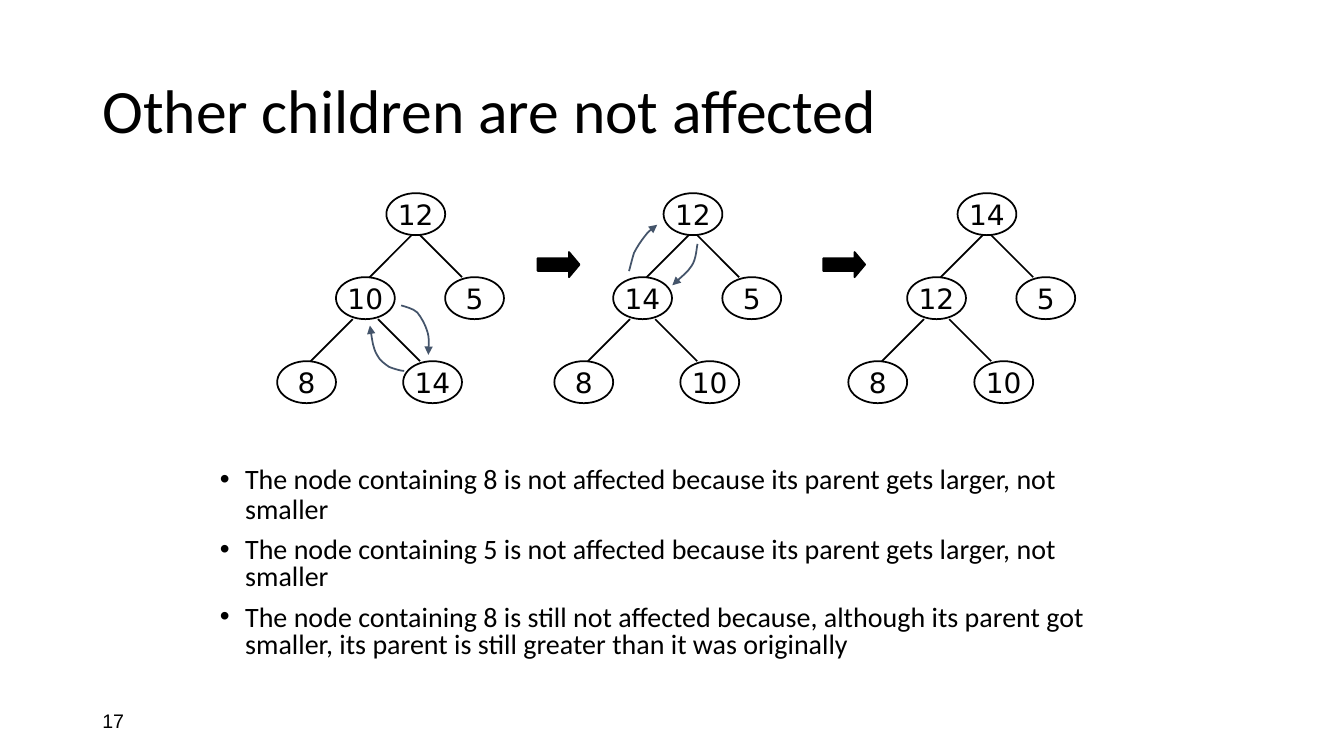
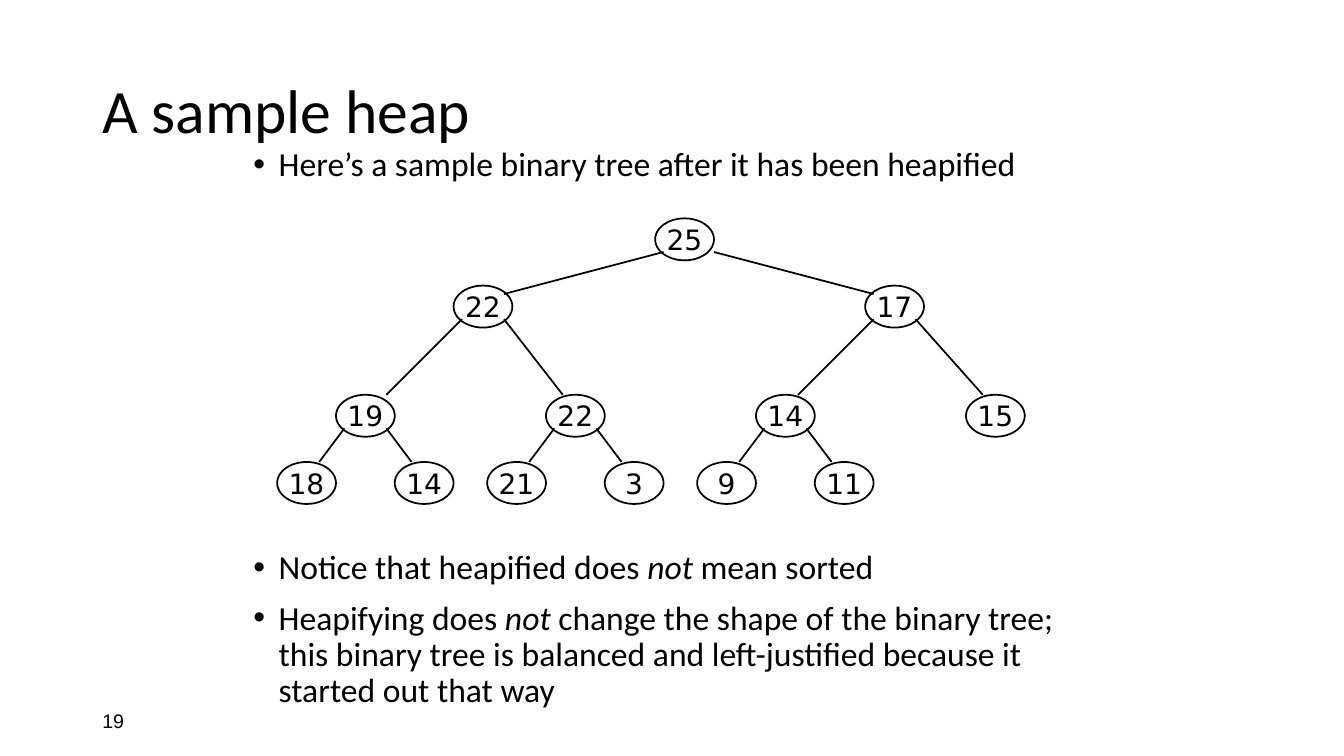
from lxml.etree import SubElement
from pptx import Presentation
from pptx.dml.color import RGBColor
from pptx.enum.shapes import MSO_CONNECTOR, MSO_SHAPE
from pptx.enum.text import MSO_ANCHOR, PP_ALIGN
from pptx.oxml.ns import qn
from pptx.util import Inches, Pt

# The slide is a grid of 160 x 90 cells, each 1/12 inch
CELL = Inches(1) // 12
COLS, ROWS = 160, 90
NODE_W, NODE_H = 7, 5
BLACK, SLATE = "000000", "44546A"
BODY_FONT, NODE_FONT, NUMBER_FONT = "Calibri", "DejaVu Sans", "Arial"
LINE_WIDTH = Pt(1.25)

# Three-level tree: node places, and edges as x1, y1, x2, y2, in cells
SMALL_NODES = [(46, 23), (40, 33), (53, 33), (33, 43), (48, 43)]
SMALL_EDGES = [(49, 28, 44, 33), (50, 28, 55, 33),
               (42, 38, 37, 43), (45, 38, 50, 43)]
SMALL_TREES = [(0, (12, 10, 5, 8, 14)), (33, (12, 14, 5, 8, 10)),
               (68, (14, 12, 5, 8, 10))]

# Swap arrows: Bezier points in hundredths of an inch
SWAPS = [
    [(401, 368), (398, 368), (391, 366), (386, 364), (382, 361), (377, 358),
     (374, 352), (370, 345), (368, 329), (367, 323)],
    [(398, 303), (401, 304), (410, 306), (414, 310), (418, 315), (422, 322),
     (424, 329), (426, 336), (425, 348), (425, 352)],
    [(624, 269), (625, 266), (627, 257), (629, 251), (632, 245), (636, 239),
     (640, 234), (643, 230), (649, 225), (652, 223)],
    [(692, 242), (691, 245), (691, 257), (686, 264), (682, 270), (671, 279),
     (667, 283)],
]

# Sample heap: top of each level with its (left, value) pairs
HEAP_LEVELS = [
    (26, [(78, 25)]),
    (34, [(54, 22), (103, 17)]),
    (47, [(40, 19), (65, 22), (90, 14), (115, 15)]),
    (55, [(33, 18), (47, 14), (58, 21), (72, 3), (83, 9), (97, 11)]),
]
HEAP_TOP_EDGES = [(79, 30, 60, 35), (85, 30, 104, 35), (55, 38, 46, 47),
                  (60, 38, 67, 47), (104, 38, 95, 47), (109, 38, 117, 47)]


def rgb(color):
    return RGBColor.from_string(color)


def cells(*values):
    return [round(v * CELL) for v in values]


def style(r, size, font, italic=None):
    r.font.size, r.font.name, r.font.italic = Pt(size), font, italic
    r.font.color.rgb = rgb(BLACK)


def outline(shape, color=BLACK):
    shape.line.color.rgb = rgb(color)
    shape.line.width = LINE_WIDTH


def text_box(s, box, anchor=MSO_ANCHOR.TOP):
    tf = s.shapes.add_textbox(*box).text_frame
    tf.word_wrap = True
    tf.vertical_anchor = anchor
    return tf


def label(s, box, text, size, font, spacing=1.0):
    tf = text_box(s, box, MSO_ANCHOR.MIDDLE)
    tf.text = text
    p = tf.paragraphs[0]
    p.line_spacing = spacing
    style(p.runs[0], size, font)


def bullets(s, box, items, size, spacing=0.9):
    """Bulleted text; words between asterisks are italic."""
    tf = text_box(s, box)
    for i, item in enumerate(items):
        p = tf.add_paragraph() if i else tf.paragraphs[0]
        p.line_spacing = spacing
        if i:
            p.space_before = Pt(10)
        pPr = p._p.get_or_add_pPr()
        pPr.set("marL", str(Inches(0.25)))
        pPr.set("indent", str(-Inches(0.25)))
        SubElement(pPr, qn("a:buFont"), typeface="Arial")
        SubElement(pPr, qn("a:buChar"), char="•")
        for j, part in enumerate(item.split("*")):
            r = p.add_run()
            r.text = part
            style(r, size, BODY_FONT, italic=bool(j % 2))


def node(s, left, top, value):
    sp = s.shapes.add_shape(MSO_SHAPE.OVAL, *cells(left, top, NODE_W, NODE_H))
    sp.shadow.inherit = False
    sp.fill.background()
    outline(sp)
    tf = sp.text_frame
    tf.word_wrap = False
    tf.vertical_anchor = MSO_ANCHOR.MIDDLE
    tf.text = str(value)
    p = tf.paragraphs[0]
    p.alignment = PP_ALIGN.CENTER
    style(p.runs[0], 20, NODE_FONT)


def edge(s, *ends):
    line = s.shapes.add_connector(MSO_CONNECTOR.STRAIGHT, *cells(*ends))
    outline(line)
    SubElement(line._element.spPr, qn("a:effectLst"))


def step_arrow(s, left):
    sp = s.shapes.add_shape(MSO_SHAPE.RIGHT_ARROW, *cells(left, 30, 5, 3))
    sp.adjustments[1] = 0.42
    sp.shadow.inherit = False
    sp.fill.solid()
    sp.fill.fore_color.rgb = rgb(BLACK)
    outline(sp)


def swap_arrow(s, points):
    builder = s.shapes.build_freeform(*points[0], scale=Inches(0.01))
    builder.add_line_segments(points[1:], close=False)
    sp = builder.convert_to_shape()
    sp.shadow.inherit = False
    sp.fill.background()
    outline(sp, SLATE)
    SubElement(sp.line._get_or_add_ln(), qn("a:tailEnd"), type="triangle")
    # Every three line segments become one Bezier curve
    segments = list(sp._element.iter(qn("a:lnTo")))
    outline_xml = segments[0].getparent()
    for i in range(0, len(segments), 3):
        curve = SubElement(outline_xml, qn("a:cubicBezTo"))
        for segment in segments[i:i + 3]:
            curve.append(segment[0])
            outline_xml.remove(segment)


def new_slide(prs, title, number):
    s = prs.slides.add_slide(prs.slide_layouts[6])
    label(s, cells(11, 83.4, 36, 4.8), number, 14, NUMBER_FONT)
    label(s, cells(11, 4.8, 138, 17.4), title, 44, BODY_FONT, 0.9)
    return s


def swap_slide(prs):
    s = new_slide(prs, "Other children are not affected", "17")
    bullets(s, cells(25, 54.8, 108, 9.2), [
        "The node containing 8 is not affected because its parent gets "
        "larger, not smaller"], 20)
    bullets(s, cells(25, 63.5, 110.3, 16), [
        "The node containing 5 is not affected because its parent gets "
        "larger, not smaller",
        "The node containing 8 is still not affected because, although its "
        "parent got smaller, its parent is still greater than it was "
        "originally"], 20, 0.8)
    for dx, values in SMALL_TREES:
        for (left, top), value in zip(SMALL_NODES, values):
            node(s, left + dx, top, value)
        for x1, y1, x2, y2 in SMALL_EDGES:
            edge(s, x1 + dx, y1, x2 + dx, y2)
    for left in (64, 98):
        step_arrow(s, left)
    for points in SWAPS:
        swap_arrow(s, points)


def heap_slide(prs):
    s = new_slide(prs, "A sample heap", "19")
    bullets(s, cells(29, 17, 102, 10), [
        "Here’s a sample binary tree after it has been heapified"], 24)
    bullets(s, cells(29, 65, 102, 22), [
        "Notice that heapified does *not* mean sorted",
        "Heapifying does *not* change the shape of the binary tree; this "
        "binary tree is balanced and left-justified because it started out "
        "that way"], 24)
    for top, level in HEAP_LEVELS:
        for left, value in level:
            node(s, left, top, value)
    for ends in HEAP_TOP_EDGES:
        edge(s, *ends)
    # The first three nodes of level three have two leaves each
    top, parents = HEAP_LEVELS[2]
    for left, _ in parents[:3]:
        edge(s, left + 1, top + 4, left - 2, top + 8)
        edge(s, left + 6, top + 4, left + 9, top + 8)


def main():
    prs = Presentation()
    prs.slide_width, prs.slide_height = cells(COLS, ROWS)
    swap_slide(prs)
    heap_slide(prs)
    prs.save("out.pptx")


if __name__ == "__main__":
    main()
